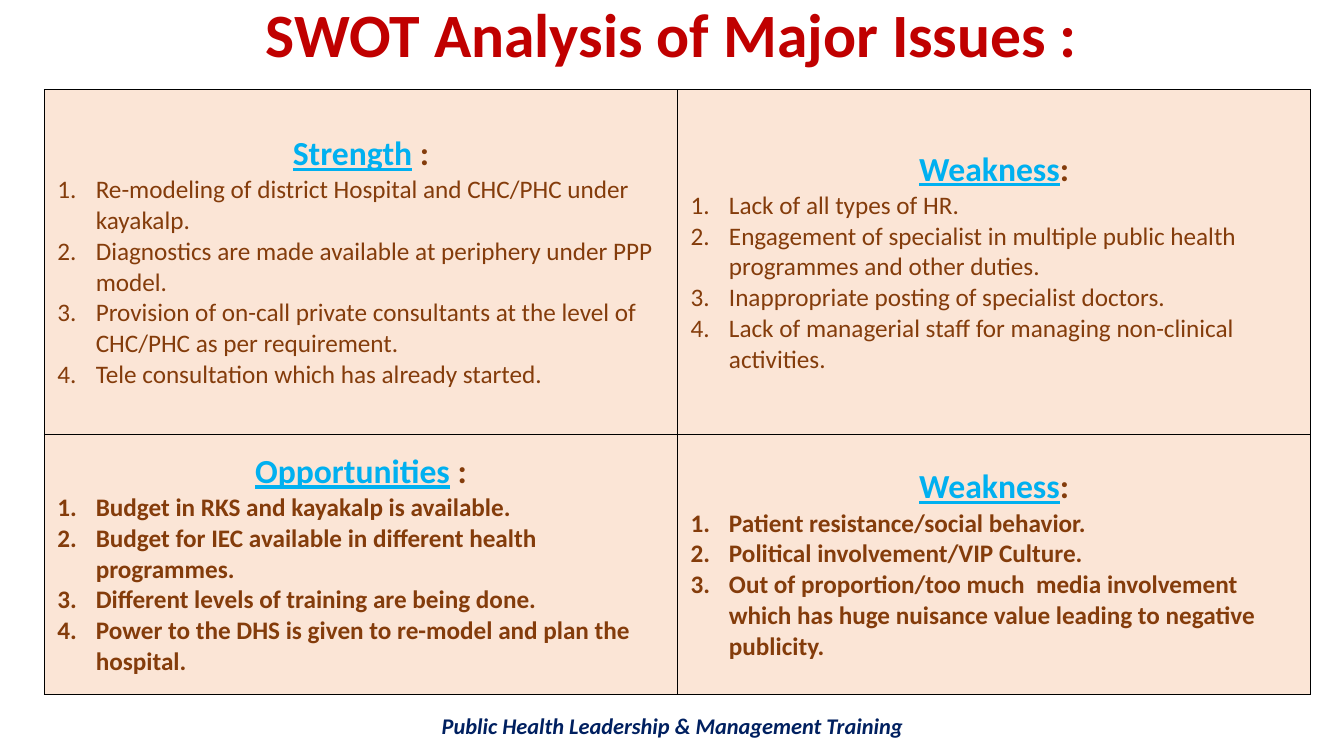
from lxml.etree import SubElement
from pptx import Presentation
from pptx.dml.color import RGBColor
from pptx.enum.text import MSO_ANCHOR, PP_ALIGN
from pptx.oxml.ns import qn
from pptx.util import Inches, Pt

COLORS = {
    "title": "C00000",
    "heading": "00B0F0",
    "body": "843C0B",
    "footer": "002060",
    "cell": "FBE5D6",
    "border": "000000",
}

QUADRANTS = [
    [
        ("Strength", " :", False, [
            "Re-modeling of district Hospital and CHC/PHC under kayakalp.",
            "Diagnostics are made available at periphery under PPP model.",
            "Provision of on-call private consultants at the level of CHC/PHC as per requirement.",
            "Tele consultation which has already started.",
        ]),
        ("Weakness", ":", False, [
            "Lack of all types of HR.",
            "Engagement of specialist in multiple public health programmes and other duties.",
            "Inappropriate posting of specialist doctors.",
            "Lack of managerial staff for managing non-clinical activities.",
        ]),
    ],
    [
        ("Opportunities", " :", True, [
            "Budget in RKS and kayakalp is available.",
            "Budget for IEC available in different health programmes.",
            "Different levels of training are being done.",
            "Power to the DHS is given to re-model and plan the hospital.",
        ]),
        ("Weakness", ":", True, [
            "Patient resistance/social behavior.",
            "Political involvement/VIP Culture.",
            "Out of proportion/too much  media involvement which has huge nuisance value leading to negative publicity.",
        ]),
    ],
]


def add_text(paragraph, text, size=18, color="body", bold=True, italic=False, underline=False):
    run = paragraph.add_run()
    run.text = text
    run.font.name = "Calibri"
    run.font.size = Pt(size)
    run.font.bold = bold
    run.font.italic = italic
    run.font.underline = underline
    run.font.color.rgb = RGBColor.from_string(COLORS[color])


def add_borders(cell):
    properties = cell._tc.get_or_add_tcPr()
    for position, side in enumerate(("a:lnL", "a:lnR", "a:lnT", "a:lnB")):
        line = SubElement(properties, qn(side), w=str(Pt(1)))
        fill = SubElement(line, qn("a:solidFill"))
        SubElement(fill, qn("a:srgbClr"), val=COLORS["border"])
        properties.insert(position, line)


presentation = Presentation()
presentation.slide_width = Inches(13.33)
presentation.slide_height = Inches(7.5)
slide = presentation.slides.add_slide(presentation.slide_layouts[6])

title = slide.shapes.add_textbox(Inches(0.33), Inches(0.08), Inches(12.67), Inches(0.58))
title.text_frame.word_wrap = True
title.text_frame.vertical_anchor = MSO_ANCHOR.MIDDLE
paragraph = title.text_frame.paragraphs[0]
paragraph.alignment = PP_ALIGN.CENTER
paragraph.line_spacing = 0.9
add_text(paragraph, "SWOT Analysis of Major Issues :", size=44, color="title")

table = slide.shapes.add_table(2, 2, Inches(0.44), Inches(0.89), Inches(12.56), Inches(6)).table
table.first_row = False
table.horz_banding = False
for column in table.columns:
    column.width = Inches(6.28)
for row, height in zip(table.rows, (3.42, 2.58)):
    row.height = Inches(height)

for row, quadrants in zip(table.rows, QUADRANTS):
    for cell, (heading, ending, bold, items) in zip(row.cells, quadrants):
        cell.vertical_anchor = MSO_ANCHOR.MIDDLE
        cell.margin_left = cell.margin_right = Inches(0.13)
        cell.margin_top = cell.margin_bottom = Inches(0.05)
        cell.fill.solid()
        cell.fill.fore_color.rgb = RGBColor.from_string(COLORS["cell"])
        add_borders(cell)

        paragraph = cell.text_frame.paragraphs[0]
        paragraph.alignment = PP_ALIGN.CENTER
        add_text(paragraph, heading, size=24, color="heading", underline=True)
        add_text(paragraph, ending, size=24)
        for item in items:
            paragraph = cell.text_frame.add_paragraph()
            paragraph.alignment = PP_ALIGN.LEFT
            add_text(paragraph, item, bold=bold)
            properties = paragraph._p.get_or_add_pPr()
            properties.set("marL", str(Inches(0.38)))
            properties.set("indent", str(Inches(-0.38)))
            SubElement(properties, qn("a:buFont"), typeface="+mj-lt")
            SubElement(properties, qn("a:buAutoNum"), type="arabicPeriod")

footer = slide.shapes.add_textbox(Inches(0.92), Inches(7.02), Inches(11.5), Inches(0.37))
footer.text_frame.word_wrap = True
paragraph = footer.text_frame.paragraphs[0]
paragraph.alignment = PP_ALIGN.CENTER
add_text(paragraph, "Public Health Leadership & Management Training", size=16, color="footer", italic=True)

presentation.save("out.pptx")
